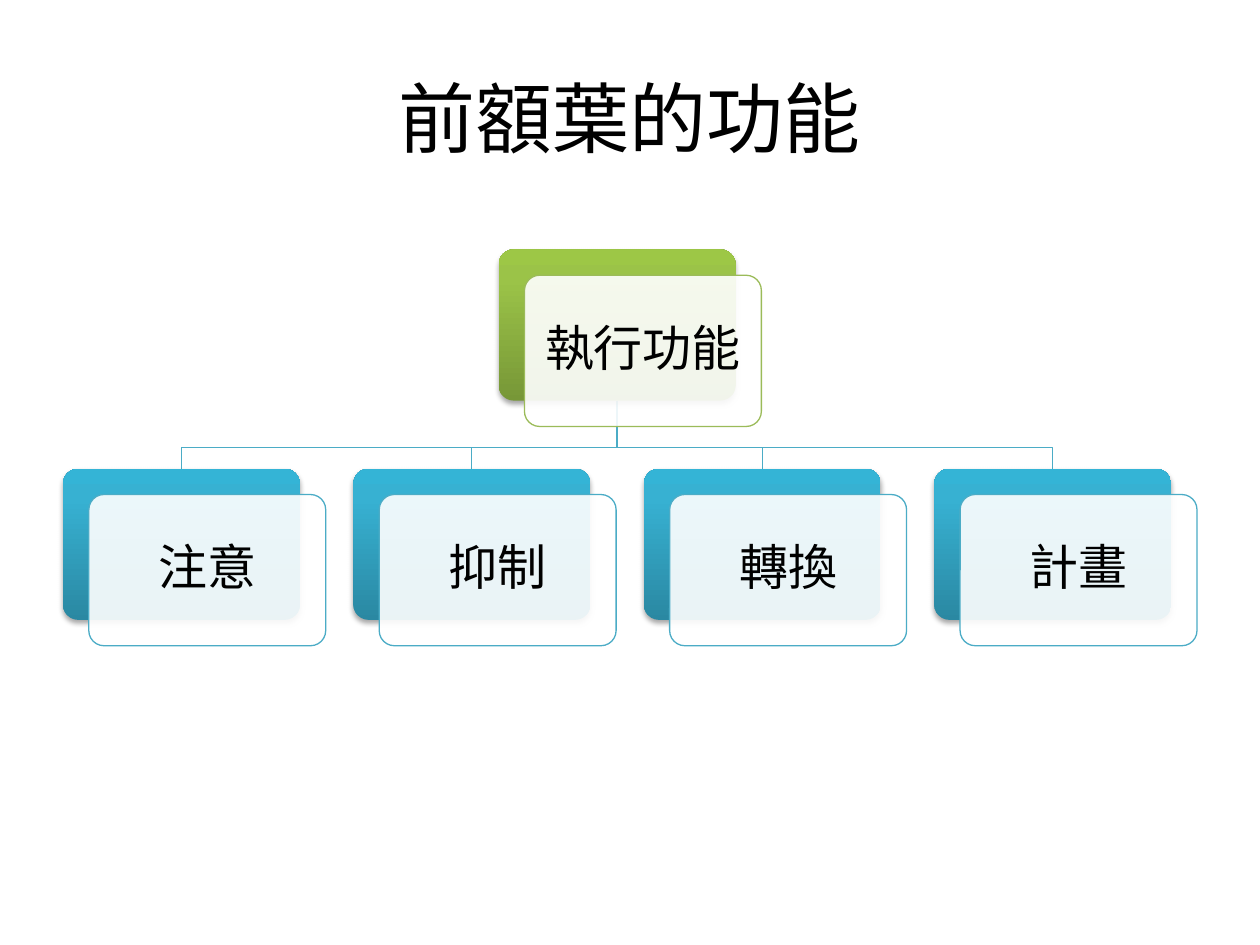
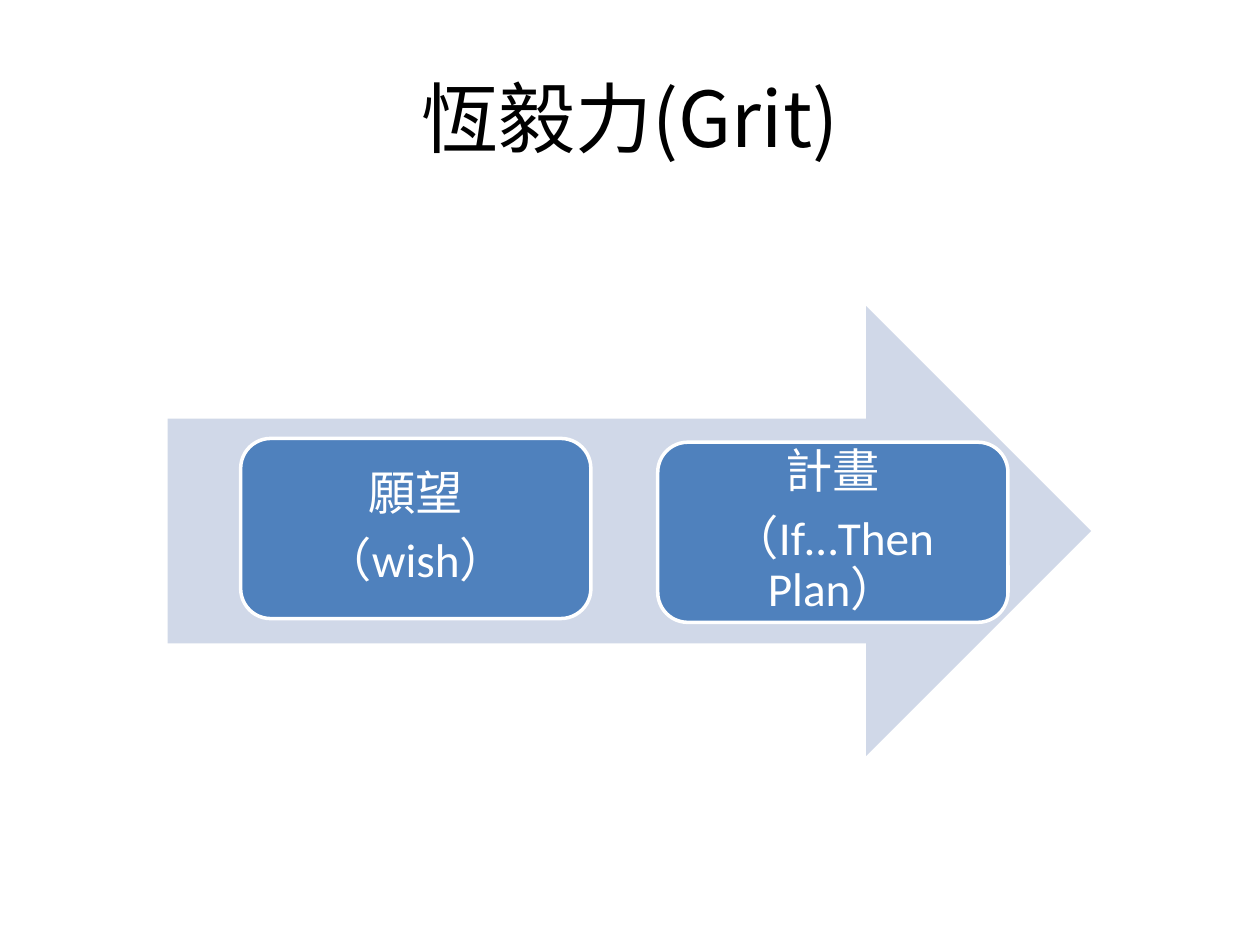
from lxml.etree import SubElement
from pptx import Presentation
from pptx.dml.color import RGBColor
from pptx.enum.shapes import MSO_SHAPE
from pptx.enum.text import MSO_ANCHOR, PP_ALIGN
from pptx.oxml.ns import qn
from pptx.util import Inches, Pt

# Content
FUNCTIONS_TITLE = "前額葉的功能"
EXECUTIVE = "執行功能"
FUNCTIONS = ["注意", "抑制", "轉換", "計畫"]
GRIT_TITLE = "恆毅力(Grit)"
GRIT_STEPS = [  # lines, left, top
    (["願望", "（wish）"], 1.91, 3.48),
    (["計畫", "（If…Then Plan）"], 5.22, 3.51),
]

# Shared style
FONT, TITLE_FONT_CJK = "Calibri", "Noto Sans CJK SC"
COLORS = {
    "text": "000000", "white": "FFFFFF", "green": "9BBB59", "teal": "4BACC6",
    "step": "4F81BD", "arrow": "D0D8E8",
}
GRADIENTS = {  # from bottom to top
    "green": [(0, "779737"), (80, "9BC348"), (100, "9DC746")],
    "teal": [(0, "2A88A2"), (80, "37B1D2"), (100, "34B4D6")],
}

# Hierarchy grid, in inches
SLIDE_W, SLIDE_H, MARGIN = 10, 7.5, 0.5
CARD_W, CARD_H, OFFSET = 1.88, 1.2, 0.205
ROOT_TOP, CHILD_TOP, BEND_Y = 1.98, 3.72, 3.55
PITCH = (SLIDE_W - 2 * MARGIN - CARD_W - OFFSET) / (len(FUNCTIONS) - 1)
ROOT_LEFT = MARGIN + PITCH * (len(FUNCTIONS) - 1) / 2


def rgb(name):
    return RGBColor.from_string(COLORS[name])


def add_titled_slide(prs, text, font):
    slide = prs.slides.add_slide(prs.slide_layouts[5])
    title = slide.shapes.title
    title.left, title.top = Inches(MARGIN), Inches(0.3)
    title.width, title.height = Inches(SLIDE_W - 2 * MARGIN), Inches(1.25)
    title.text_frame.text = text
    title.text_frame.vertical_anchor = MSO_ANCHOR.MIDDLE
    paragraph = title.text_frame.paragraphs[0]
    paragraph.alignment = PP_ALIGN.CENTER
    paragraph.font.size, paragraph.font.name = Pt(44), font
    paragraph.font.color.rgb = rgb("text")
    return slide


def add_block(slide, kind, left, top, width, height, fill=None, line=None, line_width=0.75):
    block = slide.shapes.add_shape(
        kind, Inches(left), Inches(top), Inches(width), Inches(height))
    block.shadow.inherit = False
    if fill:
        block.fill.solid()
        block.fill.fore_color.rgb = rgb(fill)
    if line:
        block.line.color.rgb = rgb(line)
        block.line.width = Pt(line_width)
    else:
        block.line.fill.background()
    return block


def write_lines(block, lines, size, color, inset):
    frame = block.text_frame
    frame.word_wrap = True
    frame.vertical_anchor = MSO_ANCHOR.MIDDLE
    frame.margin_left = frame.margin_right = Inches(inset)
    frame.margin_top = frame.margin_bottom = Inches(inset)
    frame.text = "\n".join(lines)
    for paragraph in frame.paragraphs:
        paragraph.alignment = PP_ALIGN.CENTER
        paragraph.line_spacing = 0.9
        paragraph.space_after = Pt(size * 0.35)
        paragraph.font.size, paragraph.font.name = Pt(size), FONT
        paragraph.font.color.rgb = rgb(color)


def add_color(parent, value, alpha=None):
    color = SubElement(parent, qn("a:srgbClr"), val=value)
    if alpha:
        SubElement(color, qn("a:alpha"), val=str(alpha * 1000))


def add_gradient(block, stops):
    block.fill.gradient()
    block.fill.gradient_angle = 90
    stop_list = block._element.spPr.find(".//" + qn("a:gsLst"))
    for stop in list(stop_list):
        stop_list.remove(stop)
    for position, value in stops:
        add_color(SubElement(stop_list, qn("a:gs"), pos=str(position * 1000)), value)


def add_shadow(block):
    effects = block._element.spPr.find(qn("a:effectLst"))
    shadow = SubElement(effects, qn("a:outerShdw"), blurRad=str(Pt(3.1)),
                        dist=str(Pt(1.8)), dir="5400000", rotWithShape="0")
    add_color(shadow, COLORS["text"], 35)


def add_card(slide, left, top, label, hue):
    back = add_block(slide, MSO_SHAPE.ROUNDED_RECTANGLE, left, top, CARD_W, CARD_H)
    add_gradient(back, GRADIENTS[hue])
    add_shadow(back)
    front = add_block(slide, MSO_SHAPE.ROUNDED_RECTANGLE, left + OFFSET, top + OFFSET,
                      CARD_W, CARD_H, "white", hue)
    front_fill = front._element.spPr.find(qn("a:solidFill"))
    SubElement(front_fill[0], qn("a:alpha"), val="90000")
    back.adjustments[0] = front.adjustments[0] = 0.1
    write_lines(front, [label], 28, "text", 0.12)


def add_branch(slide, child_left):
    root_x, child_x = ROOT_LEFT + CARD_W / 2, child_left + CARD_W / 2
    builder = slide.shapes.build_freeform(Inches(root_x), Inches(ROOT_TOP + CARD_H))
    corners = [(root_x, BEND_Y), (child_x, BEND_Y), (child_x, CHILD_TOP)]
    builder.add_line_segments([(Inches(x), Inches(y)) for x, y in corners], close=False)
    branch = builder.convert_to_shape()
    branch.shadow.inherit = False
    branch.fill.background()
    branch.line.color.rgb = rgb("teal")
    branch.line.width = Pt(0.75)


def build_functions(prs):
    slide = add_titled_slide(prs, FUNCTIONS_TITLE, FONT)
    child_lefts = [MARGIN + column * PITCH for column in range(len(FUNCTIONS))]
    # Branches lie behind the cards
    for left in reversed(child_lefts):
        add_branch(slide, left)
    add_card(slide, ROOT_LEFT, ROOT_TOP, EXECUTIVE, "green")
    for left, label in zip(child_lefts, FUNCTIONS):
        add_card(slide, left, CHILD_TOP, label, "teal")


def build_grit(prs):
    slide = add_titled_slide(prs, GRIT_TITLE, TITLE_FONT_CJK)
    # Arrow behind the two steps
    add_block(slide, MSO_SHAPE.RIGHT_ARROW, 1.33, 2.43, 7.33, 3.57, "arrow")
    for lines, left, top in GRIT_STEPS:
        step = add_block(slide, MSO_SHAPE.ROUNDED_RECTANGLE, left, top, 2.78, 1.43,
                         "step", "white", 2)
        write_lines(step, lines, 27, "white", 0.11)


def main():
    prs = Presentation()
    prs.slide_width, prs.slide_height = Inches(SLIDE_W), Inches(SLIDE_H)
    build_functions(prs)
    build_grit(prs)
    prs.save("out.pptx")


if __name__ == "__main__":
    main()
